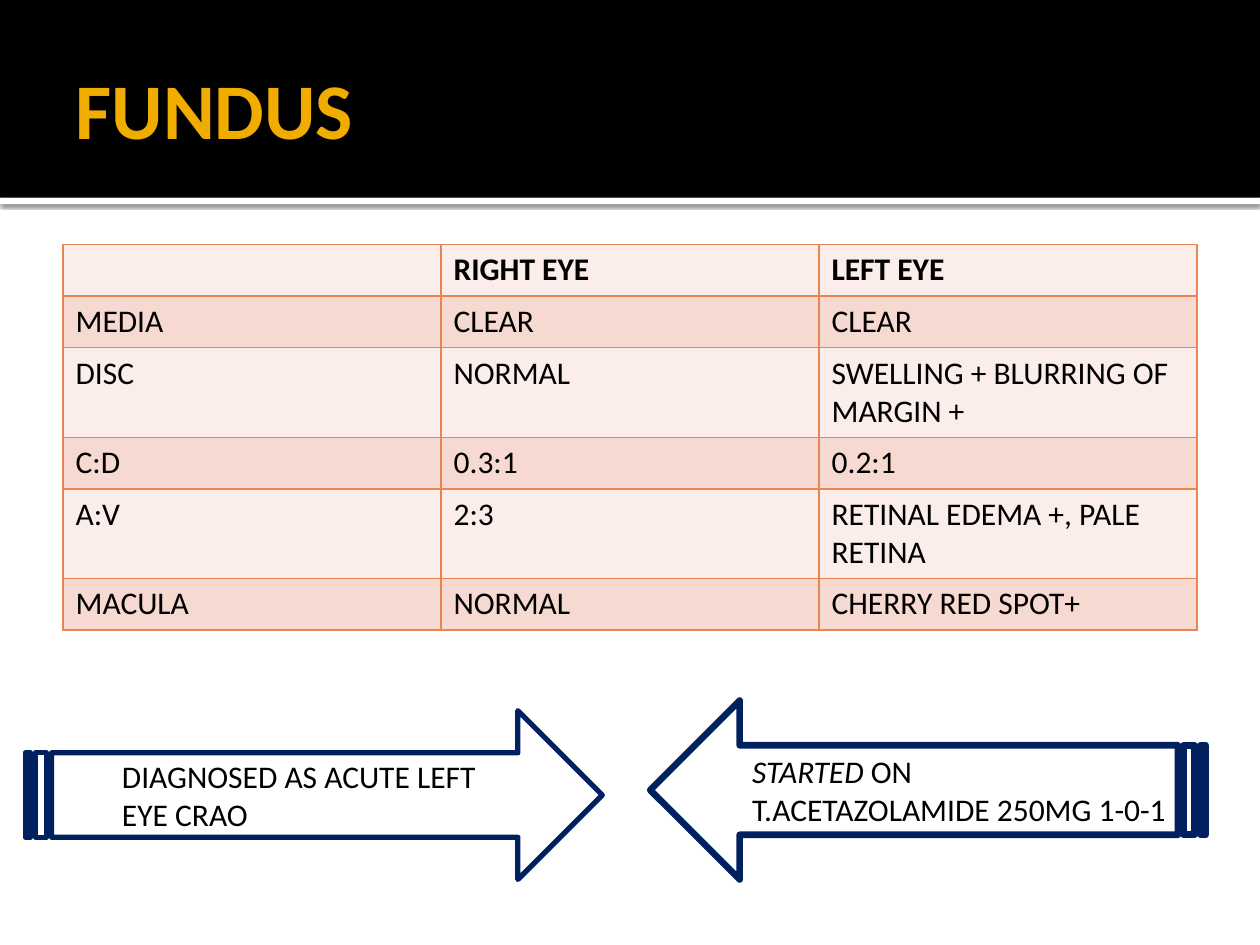
import pptx
import pptx.dml.color
import pptx.enum.shapes
import pptx.enum.text
import pptx.oxml
import pptx.oxml.ns
import pptx.util
from pptx.util import Inches

FONT = "Calibri"
NAVY, GOLD, ORANGE = "002060", "F0AD00", "E88651"
BLACK, WHITE = "000000", "FFFFFF"
BAND_FILLS = ("FBEDE9", "F6D9D0")
SHAPES = pptx.enum.shapes.MSO_SHAPE
ANCHORS = pptx.enum.text.MSO_ANCHOR

FINDINGS = [
    ("", "RIGHT EYE", "LEFT EYE"),
    ("MEDIA", "CLEAR", "CLEAR"),
    ("DISC", "NORMAL", "SWELLING + BLURRING OF MARGIN +"),
    ("C:D", "0.3:1", "0.2:1"),
    ("A:V", "2:3", "RETINAL EDEMA +, PALE RETINA"),
    ("MACULA", "NORMAL", "CHERRY RED SPOT+"),
]


def rgb(value):
    return pptx.dml.color.RGBColor.from_string(value)


def xml(markup):
    """Parse an element whose opening tag carries the placeholder NS."""
    return pptx.oxml.parse_xml(markup.replace("NS", pptx.oxml.ns.nsdecls("a"), 1))


def add_run(paragraph, text, size=18, color=BLACK, bold=False, italic=False):
    run = paragraph.add_run()
    run.text = text
    run.font.name = FONT
    run.font.size = pptx.util.Pt(size)
    run.font.bold = bold
    run.font.italic = italic
    run.font.color.rgb = rgb(color)


def add_header_band(slide, top, height, color):
    band = slide.shapes.add_shape(
        SHAPES.RECTANGLE, 0, Inches(top), Inches(10), Inches(height))
    band.shadow.inherit = False
    band.fill.solid()
    band.fill.fore_color.rgb = rgb(color)
    band.line.fill.background()
    return band


def add_drop_shadow(shape):
    effects = shape._element.spPr.find(pptx.oxml.ns.qn("a:effectLst"))
    effects.append(xml(
        '<a:outerShdw NS blurRad="31750" dist="10160" dir="5400000" '
        'algn="tl" rotWithShape="0"><a:srgbClr val="000000">'
        '<a:alpha val="60000"/></a:srgbClr></a:outerShdw>'))


def set_title(slide, text):
    title = slide.shapes.title
    title.left, title.top = Inches(0.5), Inches(0.17)
    title.width, title.height = Inches(9), Inches(1.37)
    frame = title.text_frame
    frame.vertical_anchor = ANCHORS.MIDDLE
    frame.margin_left = Inches(0.1)
    frame.margin_right = frame.margin_top = frame.margin_bottom = Inches(0.05)
    heading = frame.paragraphs[0]
    heading.alignment = pptx.enum.text.PP_ALIGN.LEFT
    add_run(heading, text, size=45, color=GOLD, bold=True)
    # Bring the title in front of the header bands
    slide.shapes._spTree.append(title._element)


def set_cell_borders(cell, color):
    properties = cell._tc.get_or_add_tcPr()
    for position, side in enumerate(("lnL", "lnR", "lnT", "lnB")):
        properties.insert(position, xml(
            f'<a:{side} NS w="12700"><a:solidFill><a:srgbClr val="{color}"/>'
            f'</a:solidFill></a:{side}>'))


def add_findings_table(slide, findings):
    row_height = 0.41
    table = slide.shapes.add_table(
        len(findings), len(findings[0]), Inches(0.5), Inches(1.94),
        Inches(9), Inches(row_height * len(findings))).table
    table.first_row = table.horz_banding = False
    for row, values in enumerate(findings):
        table.rows[row].height = Inches(row_height)
        for column, value in enumerate(values):
            cell = table.cell(row, column)
            cell.fill.solid()
            cell.fill.fore_color.rgb = rgb(BAND_FILLS[row % 2])
            set_cell_borders(cell, ORANGE)
            if value:
                add_run(cell.text_frame.paragraphs[0], value, bold=row == 0)


def add_note(slide, left, top, width, lines, wrap=True):
    """Each line is a list of (text, italic) runs."""
    frame = slide.shapes.add_textbox(
        Inches(left), Inches(top), Inches(width), Inches(0.71)).text_frame
    frame.word_wrap = wrap
    for number, runs in enumerate(lines):
        paragraph = frame.add_paragraph() if number else frame.paragraphs[0]
        for text, italic in runs:
            add_run(paragraph, text, italic=italic)


def add_striped_arrow(slide, left, top, width, height, line_width, rotation=0):
    arrow = slide.shapes.add_shape(
        SHAPES.STRIPED_RIGHT_ARROW,
        Inches(left), Inches(top), Inches(width), Inches(height))
    arrow.shadow.inherit = False
    arrow.rotation = rotation
    arrow.fill.background()
    arrow.line.color.rgb = rgb(NAVY)
    arrow.line.width = pptx.util.Pt(line_width)


def main():
    deck = pptx.Presentation()
    deck.slide_width, deck.slide_height = Inches(10), Inches(7.5)
    slide = deck.slides.add_slide(deck.slide_layouts[5])

    # Header
    add_drop_shadow(add_header_band(slide, 1.57, 0.05, WHITE))
    add_header_band(slide, 0, 1.57, BLACK)
    set_title(slide, "FUNDUS")

    # Findings for each eye
    add_findings_table(slide, FINDINGS)

    # Diagnosis and treatment
    add_note(slide, 0.87, 5.96, 3.23,
             [[("DIAGNOSED AS ACUTE LEFT EYE CRAO", False)]])
    add_striped_arrow(slide, 0.2, 5.64, 4.58, 1.34, 3)
    add_note(slide, 5.87, 5.92, 3.52,
             [[("STARTED", True), (" ON", False)],
              [("T.ACETAZOLAMIDE 250MG 1-0-1", False)]], wrap=False)
    add_striped_arrow(slide, 5.16, 5.56, 4.41, 1.42, 3.78, rotation=180)

    deck.save("out.pptx")


if __name__ == "__main__":
    main()
